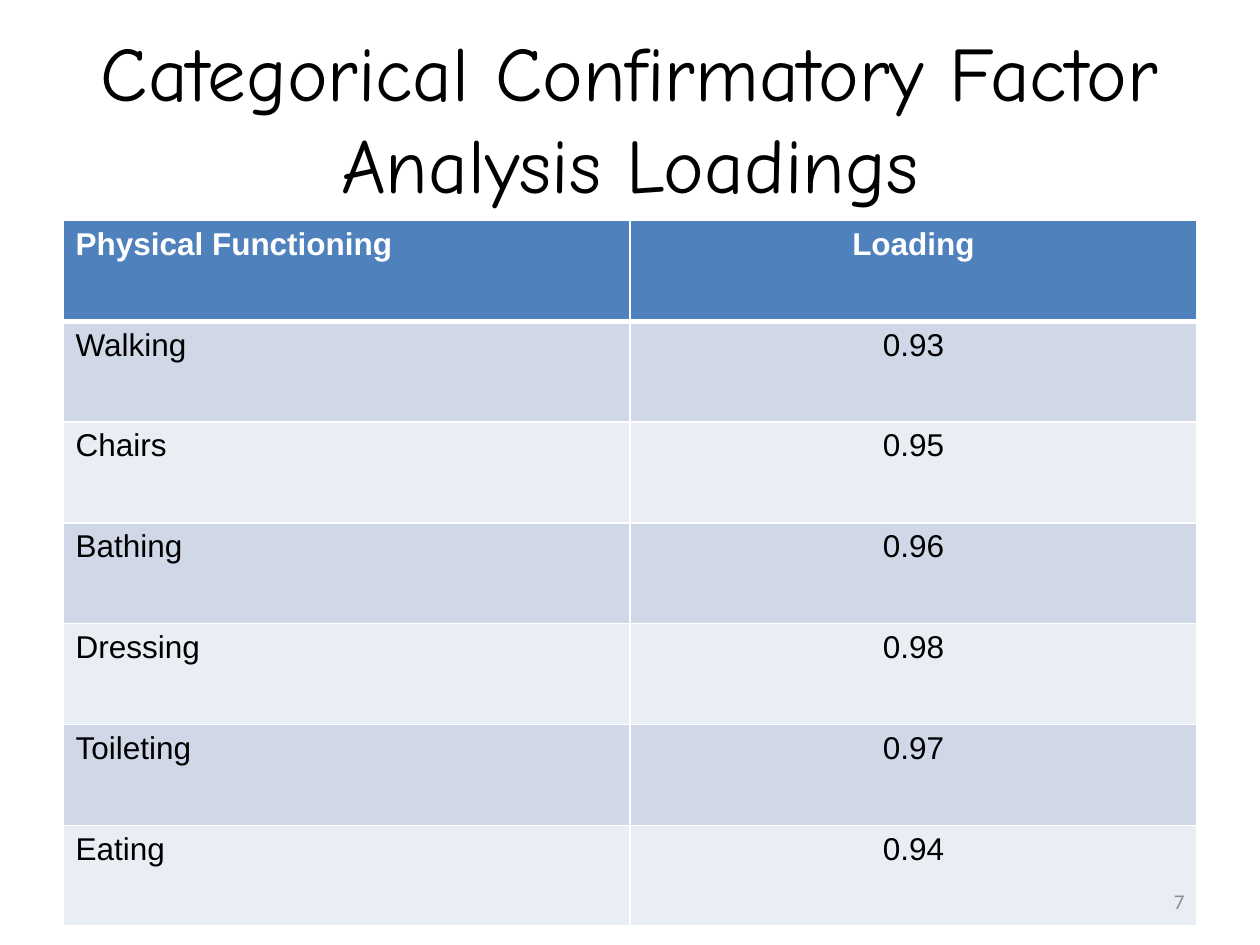
from lxml import etree
from pptx import Presentation
from pptx.dml.color import RGBColor
from pptx.enum.text import MSO_ANCHOR as Anchor, PP_ALIGN as Align
from pptx.oxml.ns import qn
from pptx.util import Inches, Pt

COLORS = {
    "text": "000000",
    "white": "FFFFFF",
    "header": "4F81BD",
    "band_dark": "D0D8E8",
    "band_light": "E9EDF4",
    "page_number": "8C8C8C",
}
LOADINGS = [
    ("Physical Functioning", "Loading"),
    ("Walking", "0.93"),
    ("Chairs", "0.95"),
    ("Bathing", "0.96"),
    ("Dressing", "0.98"),
    ("Toileting", "0.97"),
    ("Eating", "0.94"),
]


def write_text(frame, text, size=18, font="Arial", color="text", bold=False, align=Align.LEFT):
    frame.word_wrap = True
    paragraph = frame.paragraphs[0]
    paragraph.alignment = align
    run = paragraph.add_run()
    run.text = text
    run.font.size = Pt(size)
    run.font.name = font
    run.font.bold = bold
    run.font.color.rgb = RGBColor.from_string(COLORS[color])


def add_borders(cell, bottom, top):
    """Draw white cell borders, 1 pt at the sides and the given points above and below."""
    properties = cell._tc.get_or_add_tcPr()
    for side, points in (("L", 1), ("R", 1), ("T", top), ("B", bottom)):
        line = etree.SubElement(properties, qn(f"a:ln{side}"), w=str(Pt(points)))
        fill = etree.SubElement(line, qn("a:solidFill"))
        etree.SubElement(fill, qn("a:srgbClr"), val=COLORS["white"])


presentation = Presentation()
presentation.slide_width = Inches(10)
presentation.slide_height = Inches(7.5)
slide = presentation.slides.add_slide(presentation.slide_layouts[6])

title = slide.shapes.add_textbox(Inches(0.5), Inches(0.3), Inches(9), Inches(1.25))
title.text_frame.vertical_anchor = Anchor.MIDDLE
write_text(title.text_frame, "Categorical Confirmatory Factor Analysis Loadings",
           size=44, font="Comic Neue", align=Align.CENTER)

table = slide.shapes.add_table(len(LOADINGS), 2, Inches(0.5), Inches(1.75),
                               Inches(9), Inches(0.8 * len(LOADINGS))).table
for row, values in enumerate(LOADINGS):
    is_header = row == 0
    band = "header" if is_header else "band_dark" if row % 2 else "band_light"
    for column, value in enumerate(values):
        cell = table.cell(row, column)
        add_borders(cell, bottom=3 if is_header else 1, top=3 if row == 1 else 1)
        cell.fill.solid()
        cell.fill.fore_color.rgb = RGBColor.from_string(COLORS[band])
        write_text(cell.text_frame, value, color="white" if is_header else "text",
                   bold=is_header, align=Align.CENTER if column else Align.LEFT)

page_number = slide.shapes.add_textbox(Inches(7.17), Inches(6.95), Inches(2.33), Inches(0.4))
page_number.text_frame.vertical_anchor = Anchor.MIDDLE
write_text(page_number.text_frame, "7", size=12, font="Calibri",
           color="page_number", align=Align.RIGHT)

presentation.save("out.pptx")
